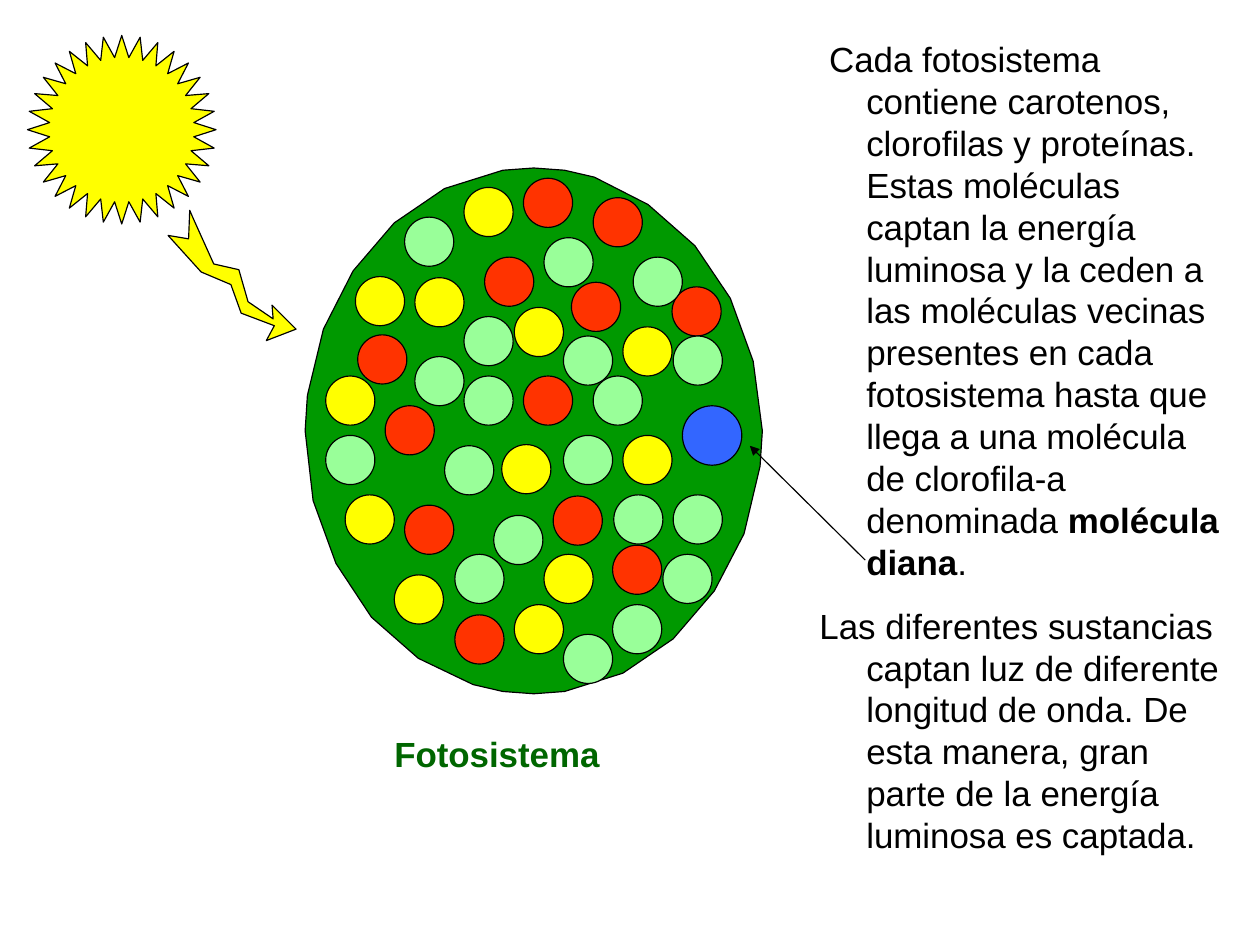
import pptx
import pptx.util
import pptx.dml.color
import pptx.enum.shapes
import pptx.enum.text
import lxml.etree

Cm, Pt = pptx.util.Cm, pptx.util.Pt
RGB = pptx.dml.color.RGBColor
KIND = pptx.enum.shapes.MSO_SHAPE

BLACK = RGB(0, 0, 0)
GREEN = RGB(0x00, 0x99, 0x00)
DARK = RGB(0x00, 0x66, 0x00)
LIGHT = RGB(0x99, 0xFF, 0x99)
RED = RGB(0xFF, 0x33, 0x00)
YELLOW = RGB(0xFF, 0xFF, 0x00)
BLUE = RGB(0x33, 0x66, 0xFF)

# Content: places in inches, turned into Cm by size()
TITLE = [[("Fotosistema", True)]]
NOTES = [
    [(" Cada fotosistema contiene carotenos, clorofilas y proteínas. Estas moléculas "
      "captan la energía luminosa y la ceden a las moléculas vecinas presentes en cada "
      "fotosistema hasta que llega a una molécula de clorofila-a denominada ", False),
     ("molécula diana", True), (".", False)],
    [("Las diferentes sustancias captan luz de diferente longitud de onda. De esta "
      "manera, gran parte de la energía luminosa es captada.", False)],
]

DOT = 0.43
DOTS = [  # colour, left and top of each molecule
    (RED, [(4.58, 1.56), (4.24, 2.25), (5, 2.47), (3.98, 5.38), (3.54, 4.42),
           (4.58, 3.29), (5.36, 4.77), (4.84, 4.34), (5.88, 2.51), (5.19, 1.73),
           (3.13, 2.93), (3.37, 3.55)]),
    (LIGHT, [(4.76, 2.08), (4.06, 2.77), (4.93, 2.94), (4.32, 4.51), (2.85, 3.81),
             (4.06, 3.29), (5.37, 4.33), (5.89, 2.94), (5.19, 3.29), (3.63, 3.12),
             (3.54, 1.9), (5.54, 2.25), (5.89, 4.33), (5.8, 4.85), (3.98, 4.85),
             (5.36, 5.29), (4.93, 5.55), (3.89, 3.9), (4.93, 3.81)]),
    (YELLOW, [(4.06, 1.64), (3.63, 2.43), (4.5, 2.69), (3.45, 5.03), (3.02, 4.33),
              (4.76, 4.85), (5.45, 2.86), (3.11, 2.42), (2.85, 3.29), (4.5, 5.29),
              (4.39, 3.89), (5.45, 3.81)]),
]
DISC = [
    (6.67, 3.77), (6.65, 4.08), (6.51, 4.67), (6.25, 5.17), (5.89, 5.59), (5.45, 5.89),
    (4.94, 6.05), (4.67, 6.07), (4.4, 6.05), (4.14, 5.99), (3.66, 5.76), (3.25, 5.4),
    (2.94, 4.93), (2.74, 4.38), (2.67, 3.77), (2.69, 3.46), (2.83, 2.88), (3.09, 2.37),
    (3.45, 1.95), (3.89, 1.65), (4.4, 1.49), (4.67, 1.47), (4.94, 1.49), (5.2, 1.55),
    (5.67, 1.79), (6.08, 2.15), (6.39, 2.61), (6.59, 3.16),
]
BOLT = [
    (1.66, 1.84), (1.69, 1.91), (1.87, 2.31), (2.09, 2.36), (2.17, 2.64), (2.39, 2.79),
    (2.38, 2.67), (2.59, 2.88), (2.33, 2.98), (2.4, 2.85), (2.11, 2.74), (2.02, 2.49),
    (1.76, 2.38), (1.47, 2.06), (1.65, 2.09),
]


def size(*nums):
    return [Cm(2.54 * n) for n in nums]


def paint(shape, fill):
    shape.shadow.inherit = False
    shape.fill.solid()
    shape.fill.fore_color.rgb = fill
    shape.line.color.rgb = BLACK
    shape.line.width = Pt(0.75)
    return shape


def draw(kind, box, fill):
    return paint(shapes.add_shape(kind, *size(*box)), fill)


def trace(spots, fill):
    spots = [size(*spot) for spot in spots]
    form = shapes.build_freeform(*spots[0])
    form.add_line_segments(spots[1:], close=True)
    return paint(form.convert_to_shape(), fill)


def write(box, paras, tint, hang=0):
    frame = shapes.add_textbox(*size(*box)).text_frame
    side, edge = size(0.11, 0.06)
    style = {"word_wrap": True, "margin_left": side, "margin_right": side,
             "margin_top": edge, "margin_bottom": edge,
             "auto_size": pptx.enum.text.MSO_AUTO_SIZE.SHAPE_TO_FIT_TEXT}
    for name, val in style.items():
        setattr(frame, name, val)
    for num, runs in enumerate(paras):
        para = frame.add_paragraph() if num else frame.paragraphs[0]
        para.space_before = Pt(13.8)
        if hang:
            props = para._p.get_or_add_pPr()
            props.set("marL", str(size(hang)[0]))
            props.set("indent", str(-size(hang)[0]))
        for text, bold in runs:
            run = para.add_run()
            run.text = text
            run.font.color.rgb = tint
            for name, val in {"name": "Arial", "size": Pt(22), "bold": bold}.items():
                setattr(run.font, name, val)


deck = pptx.Presentation()
deck.slide_width, deck.slide_height = Cm(28), Cm(21)
shapes = deck.slides.add_slide(deck.slide_layouts[6]).shapes

# Photosystem with its molecules
trace(DISC, GREEN)
for tint, spots in DOTS:
    for left, top in spots:
        draw(KIND.OVAL, (left, top, DOT, DOT), tint)
draw(KIND.OVAL, (5.97, 3.55, 0.52, 0.52), BLUE)

# Caption and explanation
write((3.34, 6.35, 3.3, 0.48), TITLE, DARK)
write((7.06, 0.27, 3.76, 7.27), NOTES, BLACK, 0.41)

# Sun and its light ray
sun = draw(KIND.STAR_32_POINT, (0.24, 0.31, 1.65, 1.65), YELLOW)
sun.adjustments[0] = 0.384
trace(BOLT, YELLOW)

# Arrow to the target molecule
arrow = shapes.add_connector(pptx.enum.shapes.MSO_CONNECTOR.STRAIGHT,
                             *size(6.56, 3.9, 7.57, 4.9))
arrow.line.color.rgb = BLACK
arrow.line.width = Pt(0.75)
SPACE = "{http://schemas.openxmlformats.org/drawingml/2006/main}"
lxml.etree.SubElement(arrow.line._get_or_add_ln(), SPACE + "headEnd", type="triangle")
lxml.etree.SubElement(arrow._element.spPr, SPACE + "effectLst")

deck.save("out.pptx")
